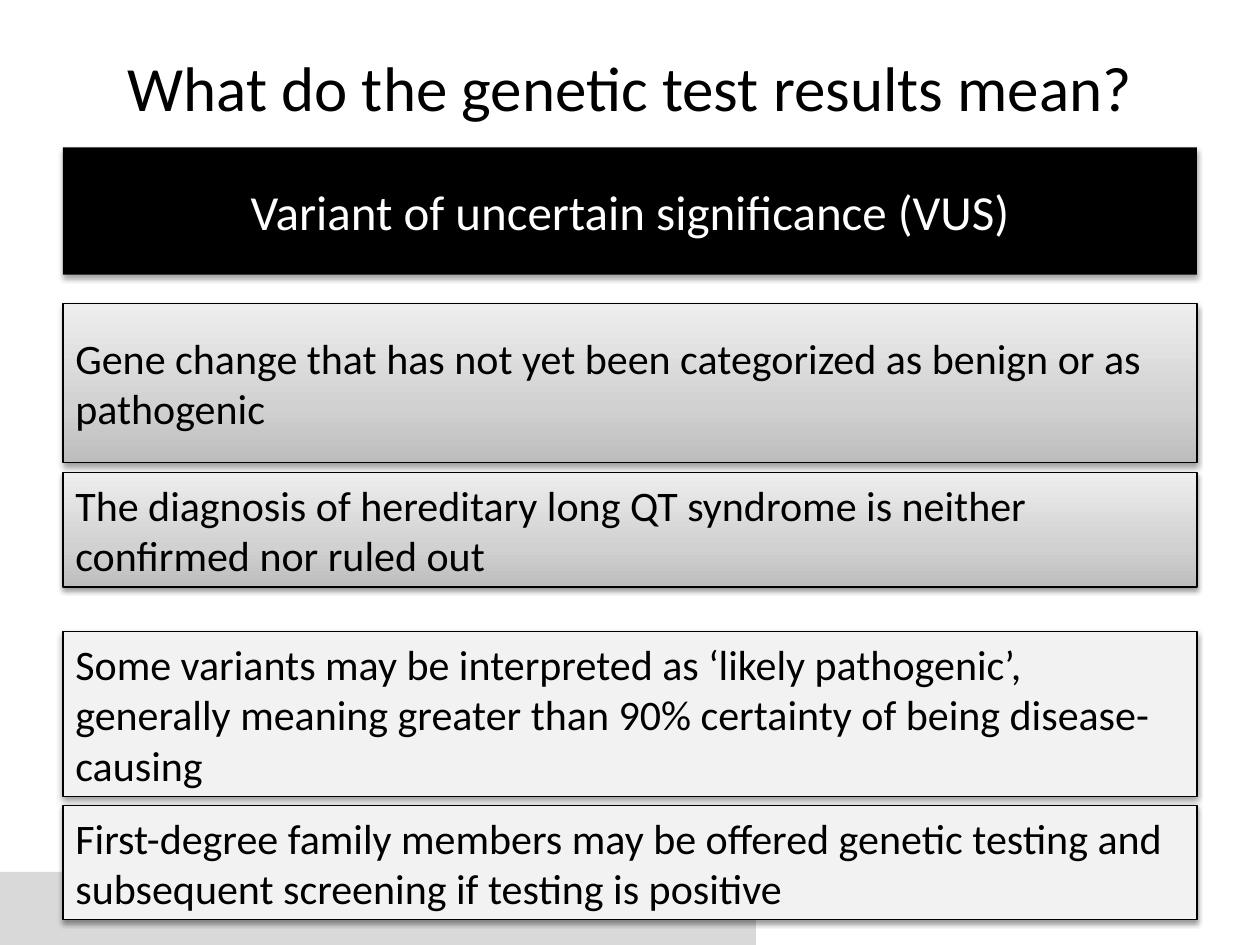
from lxml import etree
from pptx import Presentation
from pptx.dml.color import RGBColor
from pptx.enum import shapes, text
from pptx.oxml import parse_xml
from pptx.oxml.ns import nsdecls, qn
from pptx.util import Inches, Pt

COLOURS = {"black": "000000", "white": "FFFFFF", "pale": "F2F2F2", "band": "D9D9D9"}
GRADIENT = [(0, "BDBDBD"), (35, "D1D1D1"), (100, "EEEEEE")]
LEFT, WIDTH = 0.5, 9

TITLE = "What do the genetic test results mean?"
HEADING = "Variant of uncertain significance (VUS)"
# top, height, fill, text
STATEMENTS = [
    (2.41, 1.26, GRADIENT,
     "Gene change that has not yet been categorized as benign or as pathogenic"),
    (3.75, 0.91, GRADIENT,
     "The diagnosis of hereditary long QT syndrome is neither confirmed nor ruled out"),
    (5.01, 1.31, COLOURS["pale"],
     "Some variants may be interpreted as ‘likely pathogenic’, generally meaning "
     "greater than 90% certainty of being disease-causing"),
    (6.39, 0.91, COLOURS["pale"],
     "First-degree family members may be offered genetic testing and subsequent "
     "screening if testing is positive"),
]


def write_text(shape, words, size, colour="black", align=text.PP_ALIGN.LEFT):
    frame = shape.text_frame
    frame.word_wrap = True
    frame.vertical_anchor = text.MSO_ANCHOR.MIDDLE
    paragraph = frame.paragraphs[0]
    paragraph.alignment = align
    run = paragraph.add_run()
    run.text = words
    run.font.name = "Calibri"
    run.font.size = Pt(size)
    run.font.color.rgb = RGBColor.from_string(COLOURS[colour])


def fill_shape(shape, fill):
    """Fill with one hex colour, or upwards through a list of (percent, hex) stops."""
    if isinstance(fill, str):
        shape.fill.solid()
        shape.fill.fore_color.rgb = RGBColor.from_string(fill)
        return
    shape.fill.gradient()
    shape.fill.gradient_angle = 90
    stop_list = shape.element.spPr.find(".//" + qn("a:gsLst"))
    for stop in list(stop_list):
        stop_list.remove(stop)
    for percent, colour in fill:
        stop = etree.SubElement(stop_list, qn("a:gs"), pos=str(percent * 1000))
        etree.SubElement(stop, qn("a:srgbClr"), val=colour)


def add_shadow(shape, distance, opacity):
    shape.element.spPr.find(qn("a:effectLst")).append(parse_xml(
        f'<a:outerShdw {nsdecls("a")} blurRad="{Pt(3.1)}" dist="{Pt(distance)}" '
        f'dir="5400000" rotWithShape="0"><a:srgbClr val="{COLOURS["black"]}">'
        f'<a:alpha val="{opacity * 1000}"/></a:srgbClr></a:outerShdw>'))


def add_box(slide, left, top, width, height, fill, outlined=False):
    box = slide.shapes.add_shape(shapes.MSO_SHAPE.RECTANGLE, Inches(left), Inches(top),
                                 Inches(width), Inches(height))
    fill_shape(box, fill)
    if outlined:
        box.line.color.rgb = RGBColor.from_string(COLOURS["black"])
        box.line.width = Pt(0.75)
    else:
        box.line.fill.background()
    box.shadow.inherit = False
    return box


def main():
    presentation = Presentation()
    presentation.slide_width, presentation.slide_height = Inches(10), Inches(7.5)
    slide = presentation.slides.add_slide(presentation.slide_layouts[5])

    add_box(slide, 0, 6.92, 6, 0.58, COLOURS["band"])

    title = slide.shapes.title
    title.left, title.top = Inches(LEFT), Inches(0.06)
    title.width, title.height = Inches(WIDTH), Inches(1.25)
    write_text(title, TITLE, 36, align=text.PP_ALIGN.CENTER)

    heading = add_box(slide, LEFT, 1.17, WIDTH, 1.01, COLOURS["black"])
    add_shadow(heading, 1.8, 35)
    write_text(heading, HEADING, 28, "white", text.PP_ALIGN.CENTER)

    for top, height, fill, words in STATEMENTS:
        box = add_box(slide, LEFT, top, WIDTH, height, fill, outlined=True)
        add_shadow(box, 1.6, 38)
        write_text(box, words, 24)

    presentation.save("out.pptx")


if __name__ == "__main__":
    main()
